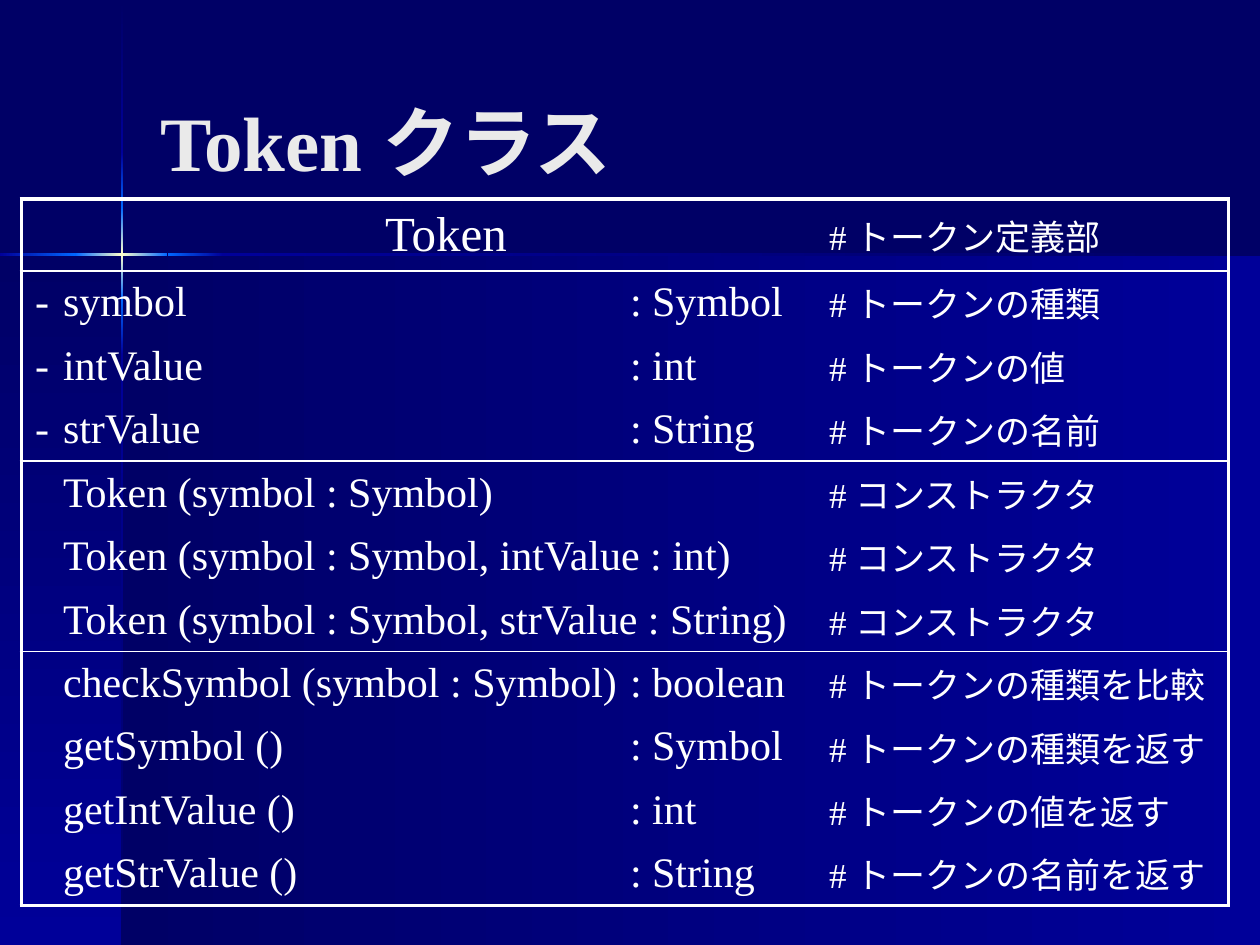
from copy import deepcopy
from itertools import pairwise

from lxml.etree import SubElement
from pptx import Presentation
from pptx.dml.color import RGBColor
from pptx.enum.shapes import MSO_SHAPE
from pptx.enum.text import MSO_ANCHOR, MSO_AUTO_SIZE, PP_ALIGN
from pptx.oxml.ns import qn
from pptx.util import Inches, Pt

WIDTH, HEIGHT = 10, 7.5
FONT = "Times New Roman"
NAVY, BLUE, BRIGHT, CREAM = "000066", "000099", "0066FF", "FFFFCC"
WHITE, PALE = "FFFFFF", "EAEAEA"
GLOW = (BRIGHT, CREAM, BRIGHT)
STAR_X, STAR_Y, RAY = 0.97, 2.02, 0.02

COLUMNS = (0.33, 4.5, 1.58, 3.17)
HEADER_HEIGHT, ROW_HEIGHT = 0.57, 0.5
# Each section of the class diagram: mark, member, type, comment
SECTIONS = (
    (("", "Token", "", "# トークン定義部"),),
    (
        ("-", "symbol", ": Symbol", "# トークンの種類"),
        ("-", "intValue", ": int", "# トークンの値"),
        ("-", "strValue", ": String", "# トークンの名前"),
    ),
    (
        ("", "Token (symbol : Symbol)", "", "# コンストラクタ"),
        ("", "Token (symbol : Symbol, intValue : int)", "", "# コンストラクタ"),
        ("", "Token (symbol : Symbol, strValue : String)", "", "# コンストラクタ"),
    ),
    (
        ("", "checkSymbol (symbol : Symbol)", ": boolean", "# トークンの種類を比較"),
        ("", "getSymbol ()", ": Symbol", "# トークンの種類を返す"),
        ("", "getIntValue ()", ": int", "# トークンの値を返す"),
        ("", "getStrValue ()", ": String", "# トークンの名前を返す"),
    ),
)


def colour(code):
    return RGBColor.from_string(code)


def add_run(para, text, size, code, bold=False):
    span = para.add_run()
    span.text = text
    span.font.name, span.font.size, span.font.bold = FONT, Pt(size), bold
    span.font.color.rgb = colour(code)


def add_gradient(page, box, codes, downward):
    """Rectangle shaded evenly through the colours, rightward or downward."""
    left, top, width, height = map(Inches, box)
    panel = page.shapes.add_shape(MSO_SHAPE.RECTANGLE, left, top, width, height)
    panel.shadow.inherit = False
    panel.line.fill.background()
    panel.fill.gradient()
    panel.fill.gradient_angle = 270 if downward else 0
    stops = panel.element.find(".//" + qn("a:gsLst"))
    for _ in codes[2:]:
        stops.insert(1, deepcopy(stops[0]))
    for index, (stop, code) in enumerate(zip(panel.fill.gradient_stops, codes)):
        stop.position = index / (len(codes) - 1)
        stop.color.rgb = colour(code)


def add_ray(page, bounds, shades, downward):
    for (start, end), codes in zip(pairwise(bounds), shades):
        length = end - start
        if downward:
            box = (STAR_X - RAY / 2, start, RAY, length)
        else:
            box = (start, STAR_Y - RAY / 2, length, RAY)
        add_gradient(page, box, codes, downward)


def add_backdrop(page):
    page.background.fill.solid()
    page.background.fill.fore_color.rgb = colour(NAVY)
    depth = HEIGHT - STAR_Y
    add_gradient(page, (STAR_X, STAR_Y, WIDTH - STAR_X, depth), (NAVY, BLUE), False)
    add_gradient(page, (0, STAR_Y, STAR_X, depth), (NAVY, BLUE), True)
    shades = ((NAVY, BLUE), (BLUE, BRIGHT), GLOW, (BRIGHT, BLUE), (BLUE, NAVY))
    add_ray(page, (0, 1.21, 1.65, 2.38, 2.82, HEIGHT), shades, True)
    add_ray(page, (0, 0.6, 1.33, 1.77, WIDTH), shades[1:], False)


def set_borders(cell, weights):
    """Left, right, top and bottom line widths in points; 0 draws no line."""
    properties = cell._tc.get_or_add_tcPr()
    for index, (side, weight) in enumerate(zip("LRTB", weights)):
        line = SubElement(properties, qn(f"a:ln{side}"), w=str(int(Pt(weight))))
        if weight:
            fill = SubElement(line, qn("a:solidFill"))
            SubElement(fill, qn("a:srgbClr"), val=WHITE)
        else:
            SubElement(line, qn("a:noFill"))
        properties.insert(index, line)


def fill_cell(cell, text, size, centred):
    cell.vertical_anchor = MSO_ANCHOR.MIDDLE
    para = cell.text_frame.paragraphs[0]
    para.alignment = PP_ALIGN.CENTER if centred else PP_ALIGN.LEFT
    spacing = SubElement(para._p.get_or_add_pPr(), qn("a:spcBef"))
    SubElement(spacing, qn("a:spcPct"), val="20000")
    add_run(para, text, size, WHITE)


def add_class_table(page, left, top):
    rows = [row for section in SECTIONS for row in section]
    section_starts = {sum(map(len, SECTIONS[:n])) for n in range(len(SECTIONS))}
    heights = [HEADER_HEIGHT] + [ROW_HEIGHT] * (len(rows) - 1)
    box = map(Inches, (left, top, sum(COLUMNS), sum(heights)))
    table = page.shapes.add_table(len(rows), len(COLUMNS), *box).table
    table.first_row = table.horz_banding = False
    for column, width in zip(table.columns, COLUMNS):
        column.width = Inches(width)

    def rule_weight(edge):
        if edge in (0, len(rows)):
            return 2.25
        return 1 if edge in section_starts else 0

    for r, row in enumerate(rows):
        table.rows[r].height = Inches(heights[r])
        if not row[2]:
            table.cell(r, 1).merge(table.cell(r, 2))
        for c, text in enumerate(row):
            cell = table.cell(r, c)
            cell.fill.background()
            outer = (2.25 if c == 0 else 0, 2.25 if c == 3 else 0)
            set_borders(cell, (*outer, rule_weight(r), rule_weight(r + 1)))
            if c:
                cell.margin_left = cell.margin_right = 0
            if text:
                size = 20 if c == 3 else 28 if r == 0 else 24
                fill_cell(cell, text, size, c == 0 or (r == 0 and c == 1))


def set_title(page, text, box):
    title = page.shapes.title
    title.left, title.top, title.width, title.height = map(Inches, box)
    frame = title.text_frame
    frame.auto_size = MSO_AUTO_SIZE.NONE
    frame.vertical_anchor = MSO_ANCHOR.MIDDLE
    para = frame.paragraphs[0]
    para.alignment = PP_ALIGN.LEFT
    add_run(para, text, 44, PALE, bold=True)
    title.element.getparent().append(title.element)


def main():
    deck = Presentation()
    deck.slide_width, deck.slide_height = Inches(WIDTH), Inches(HEIGHT)
    page = deck.slides.add_slide(deck.slide_layouts[5])
    add_backdrop(page)
    add_class_table(page, 0.17, 1.58)
    set_title(page, "Token クラス", (1.17, 0.33, 8.25, 1.57))
    deck.save("out.pptx")


if __name__ == "__main__":
    main()
